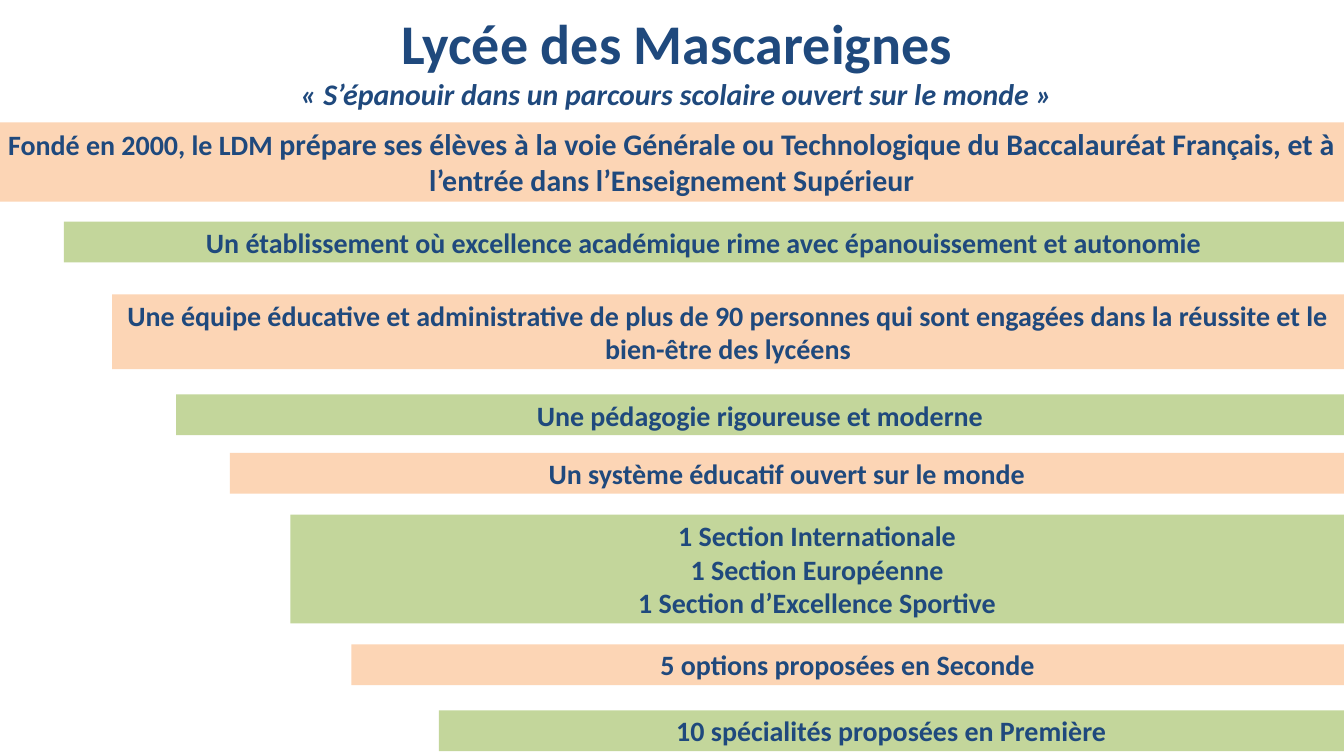
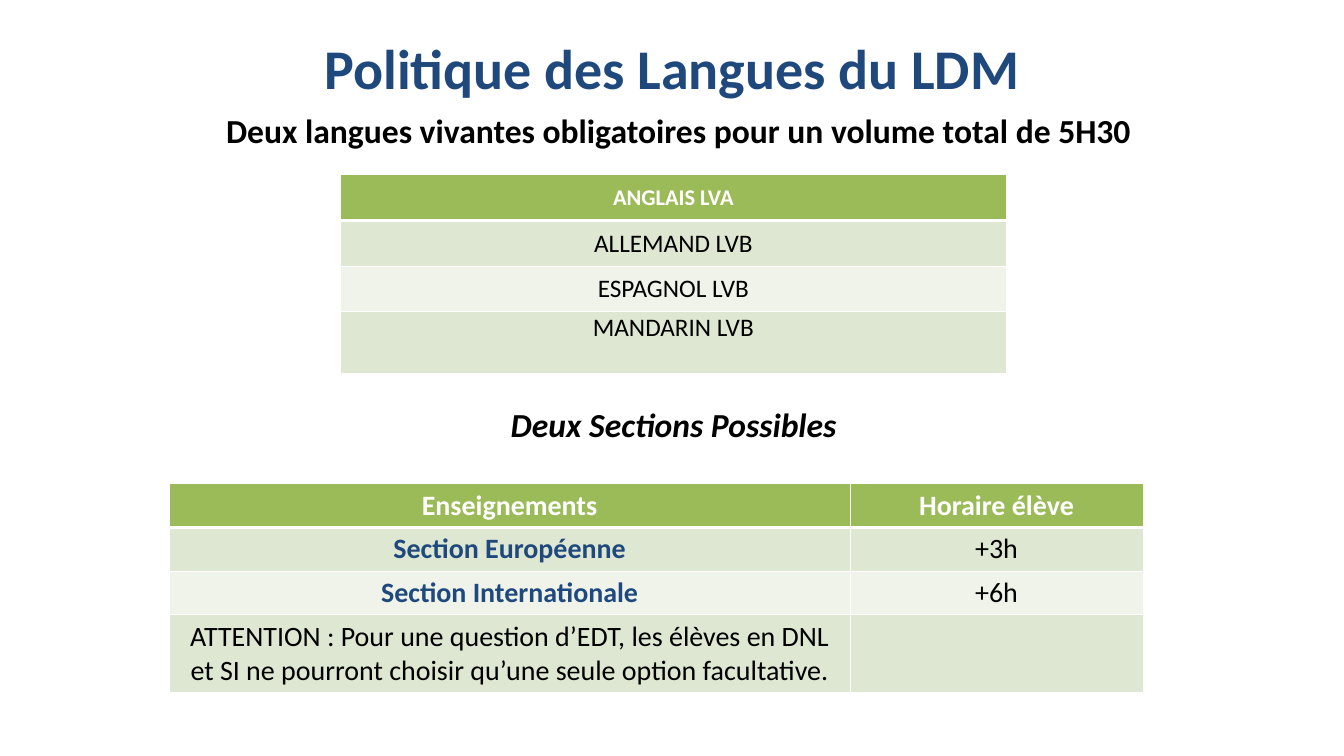
from lxml import etree
from pptx import Presentation
from pptx.dml.color import RGBColor
from pptx.enum.shapes import MSO_SHAPE
from pptx.enum.text import MSO_ANCHOR, MSO_AUTO_SIZE, PP_ALIGN
from pptx.oxml.ns import qn
from pptx.util import Inches, Pt

RECTANGLE = MSO_SHAPE.RECTANGLE
CENTER = PP_ALIGN.CENTER
TOP, MIDDLE = MSO_ANCHOR.TOP, MSO_ANCHOR.MIDDLE
NO_AUTOFIT = MSO_AUTO_SIZE.NONE

NAVY = RGBColor(0x1F, 0x49, 0x7D)
BLACK = RGBColor(0x00, 0x00, 0x00)
WHITE = RGBColor(0xFF, 0xFF, 0xFF)
PEACH = RGBColor(0xFC, 0xD5, 0xB5)
GREEN = RGBColor(0xC3, 0xD6, 0x9B)
HEADER_GREEN = RGBColor(0x9B, 0xBB, 0x59)
ROW_GREENS = (RGBColor(0xDE, 0xE7, 0xD1), RGBColor(0xEF, 0xF3, 0xEA))

FONT = "Calibri"
TITLE_SIZE, SLOGAN_SIZE, HEADING_SIZE = 60, 32, 36
BAND_SIZE, INTRO_SIZE = 30, 32
SLIDE_WIDTH, SLIDE_HEIGHT = 20, 11.25
TITLE_ONLY = 5

# Left edge, top edge and paragraphs of each band; every band runs to the right edge
BANDS = [
    (0, 1.82, ["Fondé en 2000, le LDM "]),
    (0.95, 3.3, ["Un établissement où excellence académique rime avec "
                 "épanouissement et autonomie"]),
    (1.67, 4.38, ["Une équipe éducative et administrative de plus de 90 personnes "
                  "qui sont engagées dans la réussite et le bien-être des lycéens"]),
    (2.62, 5.87, ["Une pédagogie rigoureuse et moderne"]),
    (3.42, 6.74, ["Un système éducatif ouvert sur le monde"]),
    (4.32, 7.66, ["1 Section Internationale", "1 Section Européenne",
                  "1 Section d’Excellence Sportive"]),
    (5.23, 9.59, ["5 options proposées en Seconde"]),
    (6.53, 10.57, ["10 spécialités proposées en Première"]),
]
INTRO_END = ("prépare ses élèves à la voie Générale ou Technologique du Baccalauréat "
             "Français, et à l’entrée dans l’Enseignement Supérieur")
TWO_LINE_BANDS = (0, 2)

LANGUAGES = [["ANGLAIS LVA"], ["ALLEMAND LVB"], ["ESPAGNOL LVB"], ["MANDARIN LVB"]]
SECTIONS = [
    ["Enseignements", "Horaire élève"],
    ["Section Européenne", "+3h"],
    ["Section Internationale", "+6h"],
    ["ATTENTION : Pour une question d’EDT, les élèves en DNL et SI ne pourront "
     "choisir qu’une seule option facultative.", ""],
]


def style(paragraph, size, color, bold=True, italic=False):
    paragraph.alignment = CENTER
    for run in paragraph.runs:
        run.font.name = FONT
        run.font.size = Pt(size)
        run.font.color.rgb = color
        run.font.bold = bold
        run.font.italic = italic


def text_height(lines, size):
    """Height in inches of a box holding this many lines, margins included."""
    return 0.1 + lines * size * 1.215 / 72


def add_title_slide(prs, text, left, top, height):
    """Add a slide whose first title line is large and whose second is a slogan."""
    slide = prs.slides.add_slide(prs.slide_layouts[TITLE_ONLY])
    title = slide.shapes.title
    title.left, title.top = Inches(left), Inches(top)
    title.width, title.height = Inches(SLIDE_WIDTH), Inches(height)
    frame = title.text_frame
    frame.text = text
    frame.auto_size = NO_AUTOFIT
    frame.vertical_anchor = TOP
    style(frame.paragraphs[0], TITLE_SIZE, NAVY)
    for slogan in frame.paragraphs[1:]:
        style(slogan, SLOGAN_SIZE, NAVY, italic=True)
    return slide


def add_band(slide, left, top, lines, size, color, paragraphs):
    band = slide.shapes.add_shape(
        RECTANGLE, Inches(left), Inches(top),
        Inches(SLIDE_WIDTH - left), Inches(text_height(lines, size)))
    band.shadow.inherit = False
    band.fill.solid()
    band.fill.fore_color.rgb = color
    band.line.fill.background()
    frame = band.text_frame
    frame.word_wrap = True
    frame.vertical_anchor = MIDDLE
    frame.text = "\n".join(paragraphs)
    for paragraph in frame.paragraphs:
        style(paragraph, BAND_SIZE, NAVY)
    return band


def add_heading(slide, left, top, width, text, italic=False):
    heading = slide.shapes.add_textbox(
        Inches(left), Inches(top), Inches(width),
        Inches(text_height(1, HEADING_SIZE)))
    frame = heading.text_frame
    frame.word_wrap = True
    frame.text = text
    style(frame.paragraphs[0], HEADING_SIZE, BLACK, italic=italic)


def set_borders(cell, row):
    """White borders, thicker between the header and the first row."""
    widths = {"a:lnL": 1, "a:lnR": 1,
              "a:lnT": 3 if row == 1 else 1,
              "a:lnB": 3 if row == 0 else 1}
    properties = cell._tc.get_or_add_tcPr()
    for side, width in widths.items():
        border = etree.SubElement(properties, qn(side), w=str(Pt(width)))
        fill = etree.SubElement(border, qn("a:solidFill"))
        etree.SubElement(fill, qn("a:srgbClr"), val=str(WHITE))


def add_grid(slide, left, top, column_widths, row_heights, rows, margins):
    """Add a table with a green header and alternating rows."""
    side_margin, top_margin, bottom_margin = margins
    table = slide.shapes.add_table(
        len(rows), len(column_widths), Inches(left), Inches(top),
        Inches(sum(column_widths)), Inches(sum(row_heights))).table
    for column, width in zip(table.columns, column_widths):
        column.width = Inches(width)
    for r, (height, texts) in enumerate(zip(row_heights, rows)):
        table.rows[r].height = Inches(height)
        for c, text in enumerate(texts):
            cell = table.cell(r, c)
            set_borders(cell, r)
            cell.fill.solid()
            cell.fill.fore_color.rgb = ROW_GREENS[(r - 1) % 2] if r else HEADER_GREEN
            cell.margin_left = cell.margin_right = Inches(side_margin)
            cell.margin_top = Inches(top_margin)
            cell.margin_bottom = Inches(bottom_margin)
            cell.text = text
    return table


def build_school_slide(prs):
    slide = add_title_slide(
        prs, "Lycée des Mascareignes\n"
             "« S’épanouir dans un parcours scolaire ouvert sur le monde »",
        0.07, 0.07, 1.68)
    for i, (left, top, paragraphs) in enumerate(BANDS):
        lines = 2 if i in TWO_LINE_BANDS else len(paragraphs)
        size = BAND_SIZE if i else INTRO_SIZE
        band = add_band(slide, left, top, lines, size,
                        GREEN if i % 2 else PEACH, paragraphs)
        if i == 0:
            intro = band.text_frame.paragraphs[0]
            intro.add_run().text = INTRO_END
            style(intro, INTRO_SIZE, NAVY)
            intro.runs[0].font.size = Pt(BAND_SIZE)


def build_languages_slide(prs):
    slide = add_title_slide(prs, "Politique des Langues du LDM", 0, 0.45, 1.11)
    add_heading(slide, 2.85, 1.58, 14.5,
                "Deux langues vivantes obligatoires pour un volume total de 5H30")
    add_heading(slide, 3.47, 5.96, 13.11, "Deux Sections Possibles", italic=True)

    languages = add_grid(slide, 5.06, 2.59, [9.92], [0.69, 0.68, 0.68, 0.91],
                         LANGUAGES, (0.01, 0.01, 0))
    last = len(LANGUAGES) - 1
    for r in range(len(LANGUAGES)):
        cell = languages.cell(r, 0)
        cell.vertical_anchor = TOP if r == last else MIDDLE
        header = r == 0
        style(cell.text_frame.paragraphs[0], 24 if header else 27,
              WHITE if header else BLACK, bold=header)

    sections = add_grid(slide, 2.52, 7.2, [10.13, 4.36], [0.65, 0.65, 0.65, 1.15],
                        SECTIONS, (0.15, 0.07, 0.07))
    for r, texts in enumerate(SECTIONS):
        for c in range(len(texts)):
            header = r == 0
            section_name = c == 0 and r in (1, 2)
            color = WHITE if header else NAVY if section_name else BLACK
            style(sections.cell(r, c).text_frame.paragraphs[0], 30, color,
                  bold=header or section_name)


def main():
    prs = Presentation()
    prs.slide_width, prs.slide_height = Inches(SLIDE_WIDTH), Inches(SLIDE_HEIGHT)
    build_school_slide(prs)
    build_languages_slide(prs)
    prs.save("out.pptx")


if __name__ == "__main__":
    main()
